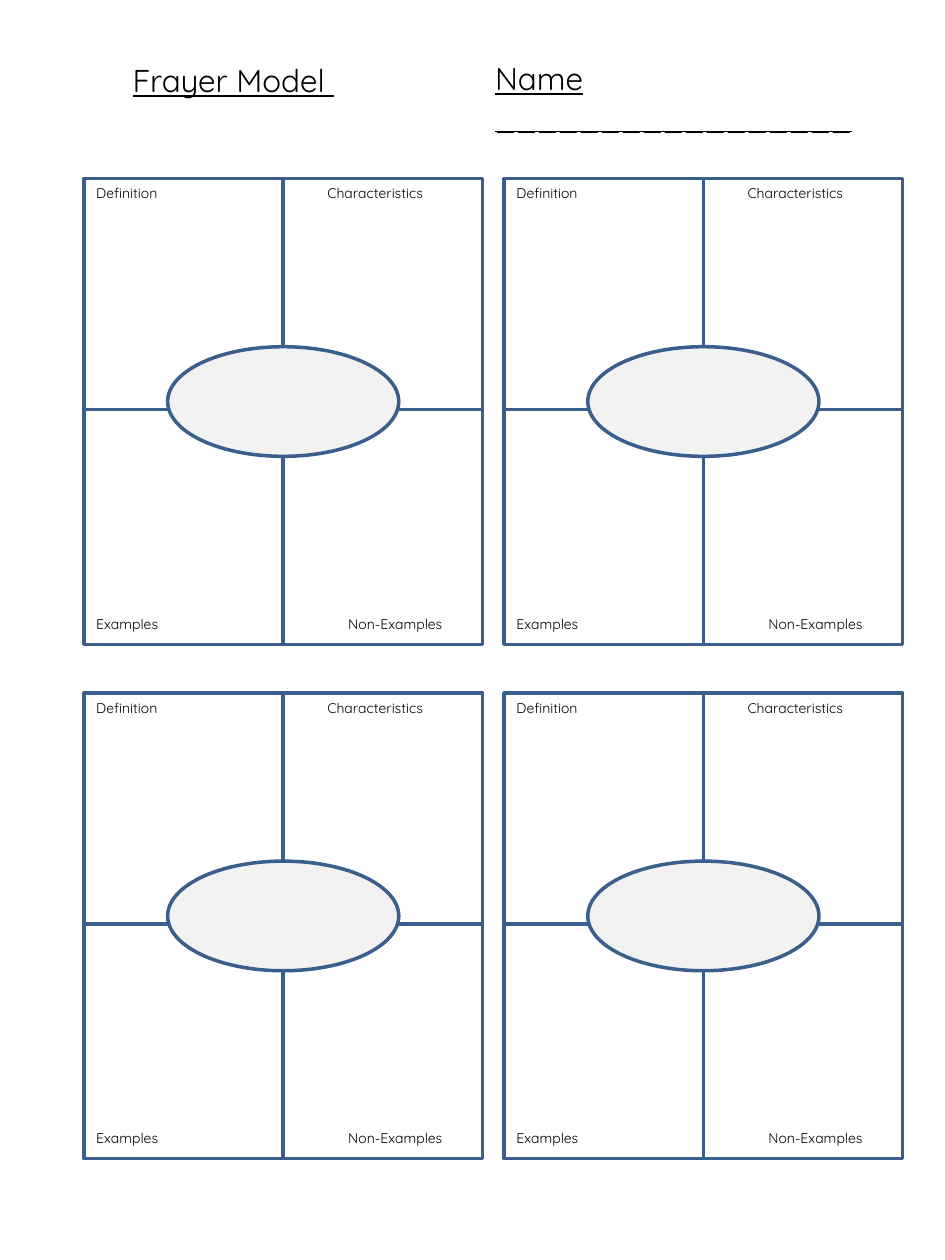
from itertools import product

from pptx import Presentation
from pptx.dml.color import RGBColor
from pptx.enum.shapes import MSO_SHAPE as Shape
from pptx.enum.text import MSO_ANCHOR as Anchor, MSO_AUTO_SIZE as AutoSize, PP_ALIGN as Align
from pptx.util import Cm, Pt

COLORS = {"outline": "3A5F8C", "oval": "F2F2F2", "text": "000000"}

# Panel grid, in cm
LEFT, TOP = 1.69, 3.6
STEP_X, STEP_Y = 8.47, 10.37
CELL_W = 4.02
ROWS = [(0, 4.66), (4.66, 4.73)]  # offset and height

# Label, offset in the panel and width, in cm
LABELS = [
    ("Definition", 0, 0, 2.16),
    ("Characteristics", 4.66, 0, 3.12),
    ("Examples", 0, 8.68, 2.18),
    ("Non-Examples", 5.08, 8.68, 2.97),
]


class Worksheet:
    font = "Quicksand"
    line_width = Pt(2)

    def __init__(self, slide):
        self.slide = slide

    def color(self, key):
        return RGBColor.from_string(COLORS[key])

    def set_text(self, frame, text, size, underline=None):
        frame.text = text
        paragraph = frame.paragraphs[0]
        paragraph.font.name = self.font
        paragraph.font.size = Pt(size)
        paragraph.font.underline = underline
        paragraph.font.color.rgb = self.color("text")
        return paragraph

    def title(self, text, x, y, w, h):
        heading = self.slide.shapes.title
        heading.left, heading.top, heading.width, heading.height = map(Cm, (x, y, w, h))
        frame = heading.text_frame
        frame.auto_size = AutoSize.NONE
        frame.vertical_anchor = Anchor.MIDDLE
        self.set_text(frame, text, 18, True).alignment = Align.CENTER

    def label(self, text, x, y, w, h=0.61, size=8, underline=None):
        frame = self.slide.shapes.add_textbox(*map(Cm, (x, y, w, h))).text_frame
        frame.word_wrap = True
        self.set_text(frame, text, size, underline)

    def outline(self, kind, x, y, w, h, fill=None):
        shape = self.slide.shapes.add_shape(kind, *map(Cm, (x, y, w, h)))
        shape.shadow.inherit = False
        shape.line.color.rgb = self.color("outline")
        shape.line.width = self.line_width
        if fill:
            shape.fill.solid()
            shape.fill.fore_color.rgb = self.color(fill)
        else:
            shape.fill.background()

    def panel(self, x, y):
        # Four cells, the oval for the term, then the labels
        for (row_y, row_h), column in product(ROWS, range(2)):
            self.outline(Shape.RECTANGLE, x + column * CELL_W, y + row_y, CELL_W, row_h)
        self.outline(Shape.OVAL, x + 1.69, y + 3.39, 4.66, 2.21, "oval")
        for text, label_x, label_y, width in LABELS:
            self.label(text, x + label_x, y + label_y, width)


def main():
    deck = Presentation()
    deck.slide_width, deck.slide_height = Cm(19.05), Cm(25.4)
    sheet = Worksheet(deck.slides.add_slide(deck.slide_layouts[5]))

    # Heading
    sheet.title("Frayer Model ", 0.84, 1.07, 7.72, 1.09)
    sheet.label("Name " + "_" * 17, 9.73, 1.07, 7.95, 1.02, size=18, underline=True)

    # Two rows of two panels
    for row, column in product(range(2), repeat=2):
        sheet.panel(LEFT + column * STEP_X, TOP + row * STEP_Y)

    deck.save("out.pptx")


if __name__ == "__main__":
    main()
